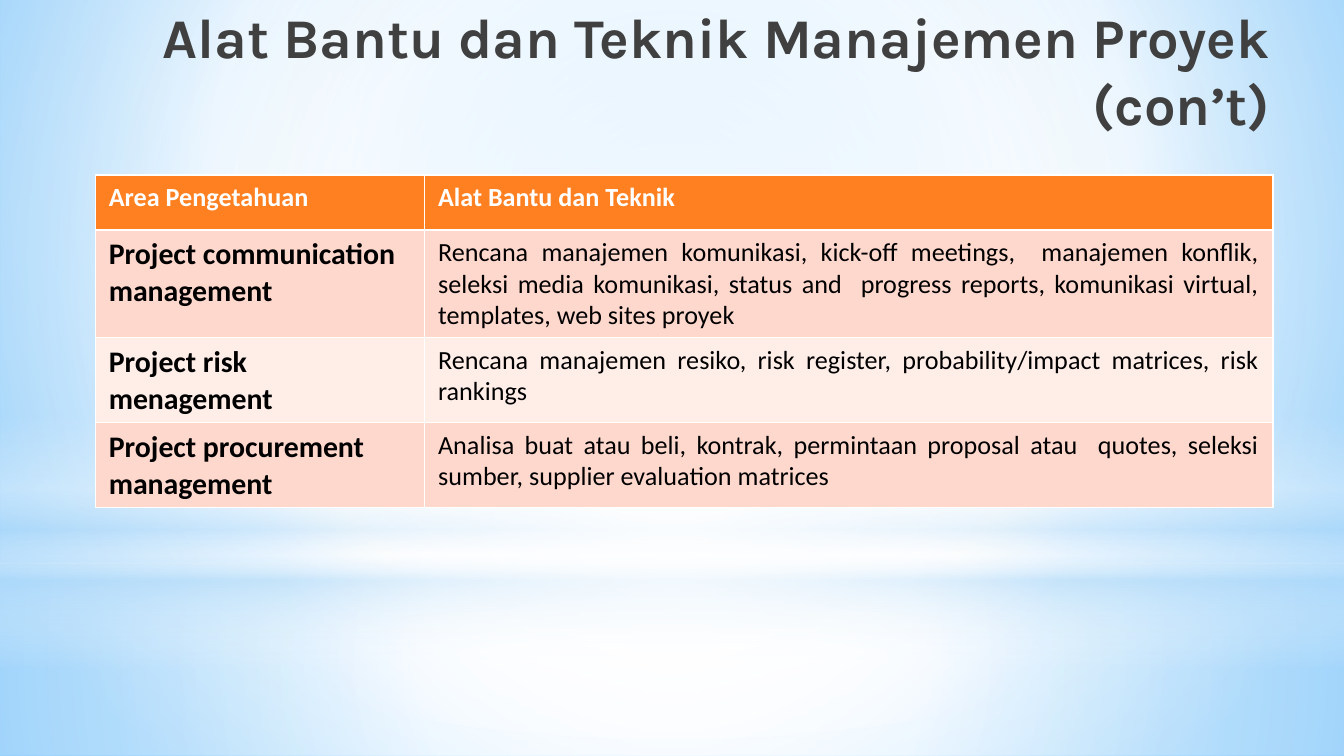
from lxml.etree import SubElement
from pptx import Presentation
from pptx.dml.color import RGBColor
from pptx.enum.shapes import MSO_SHAPE
from pptx.enum.text import MSO_ANCHOR, PP_ALIGN
from pptx.oxml.ns import qn
from pptx.util import Inches, Pt


def set_gradient(root, stops, focus=None):
    grad = root.find(".//" + qn("a:gradFill"))
    grad.clear()
    grad.set("rotWithShape", "1")
    gs_lst = SubElement(grad, qn("a:gsLst"))
    for pos, color, alpha in stops:
        gs = SubElement(gs_lst, qn("a:gs"), pos=str(pos * 1000))
        clr = SubElement(gs, qn("a:srgbClr"), val=color)
        if alpha < 100:
            SubElement(clr, qn("a:alpha"), val=str(alpha * 1000))
    if focus:
        path = SubElement(grad, qn("a:path"), path="circle")
        sides = {k: str(v * 1000) for k, v in zip("ltrb", focus)}
        SubElement(path, qn("a:fillToRect"), **sides)
    else:
        SubElement(grad, qn("a:lin"), ang="5400000", scaled="1")


def add_run(p, text, size, color, font="Calibri", bold=False):
    r = p.add_run()
    r.text = text
    r.font.size = Pt(size)
    r.font.name = font
    r.font.bold = bold
    r.font.color.rgb = RGBColor.from_string(color)


prs = Presentation()
prs.slide_width = Inches(10)
prs.slide_height = prs.slide_width * 9 // 16
W, H = prs.slide_width, prs.slide_height
s = prs.slides.add_slide(prs.slide_layouts[6])

s.background.fill.gradient()
set_gradient(s.element, [(0, "9ED5FF", 100), (60, "FFFFFF", 100), (100, "5BB9FF", 100)],
             (20, 10, 20, 60))

center = (50, 50, 50, 50)
layers = [
    (MSO_SHAPE.RECTANGLE, 4.19, 1.44, center,
     [(0, "FFFFFF", 91), (37, "FFFFFF", 76), (100, "B4DCFA", 79)]),
    (MSO_SHAPE.RECTANGLE, 0, 4.19, center,
     [(0, "FFFFFF", 89), (48, "FFFFFF", 62), (100, "B4DCFA", 79)]),
    (MSO_SHAPE.RECTANGLE, 3.09, 1.88, None,
     [(0, "FFFFFF", 0), (29, "FFFFFF", 30), (45, "B4DCFA", 40),
      (55, "FFFFFF", 26), (65, "B4DCFA", 60), (100, "FFFFFF", 0)]),
    (MSO_SHAPE.OVAL, 1.31, 4.19, center,
     [(0, "FFFFFF", 100), (56, "FFFFFF", 0)]),
]
for kind, top, height, focus, stops in layers:
    sp = s.shapes.add_shape(kind, 0, Inches(top), W, min(Inches(height), H - Inches(top)))
    sp.shadow.inherit = False
    sp.line.fill.background()
    sp.fill.gradient()
    set_gradient(sp.element, stops, focus)

title = s.shapes.add_textbox(Inches(0.7), Inches(0.49), Inches(8.85), Inches(0.63))
tf = title.text_frame
tf.word_wrap = True
tf.vertical_anchor = MSO_ANCHOR.BOTTOM
tf.margin_left = tf.margin_top = tf.margin_right = tf.margin_bottom = Inches(0.1)
p = tf.paragraphs[0]
p.alignment = PP_ALIGN.RIGHT
pPr = p._p.get_or_add_pPr()
pPr.set("marL", str(Inches(0.35)))
pPr.set("indent", str(-Inches(0.35)))
add_run(p, "Alat Bantu dan Teknik Manajemen Proyek (con’t)", 30, "404040", "Karla", True)

rows = [
    ("Area Pengetahuan", "Alat Bantu dan Teknik"),
    ("Project communication management",
     "Rencana manajemen komunikasi, kick-off meetings,  manajemen konflik, "
     "seleksi media komunikasi, status and  progress reports, komunikasi virtual, "
     "templates, web sites proyek"),
    ("Project risk menagement",
     "Rencana manajemen resiko, risk register, probability/impact matrices, risk rankings"),
    ("Project procurement management",
     "Analisa buat atau beli, kontrak, permintaan proposal atau  quotes, "
     "seleksi sumber, supplier evaluation matrices"),
]
row_h = 0.41
table = s.shapes.add_table(len(rows), 2, Inches(0.71), Inches(1.3),
                           Inches(8.76), Inches(row_h * len(rows))).table
for column, width in zip(table.columns, (2.45, 6.31)):
    column.width = Inches(width)

for i, texts in enumerate(rows):
    for j, text in enumerate(texts):
        cell = table.cell(i, j)
        fill = "FF8021" if i == 0 else ("FFEDE8", "FFD8CD")[i % 2]
        cell.fill.solid()
        cell.fill.fore_color.rgb = RGBColor.from_string(fill)
        p = cell.text_frame.paragraphs[0]
        if i and j:
            p.alignment = PP_ALIGN.JUSTIFY
        add_run(p, text, 16 if i and not j else 14,
                "000000" if i else "FFFFFF", bold=i == 0 or j == 0)

prs.save("out.pptx")
